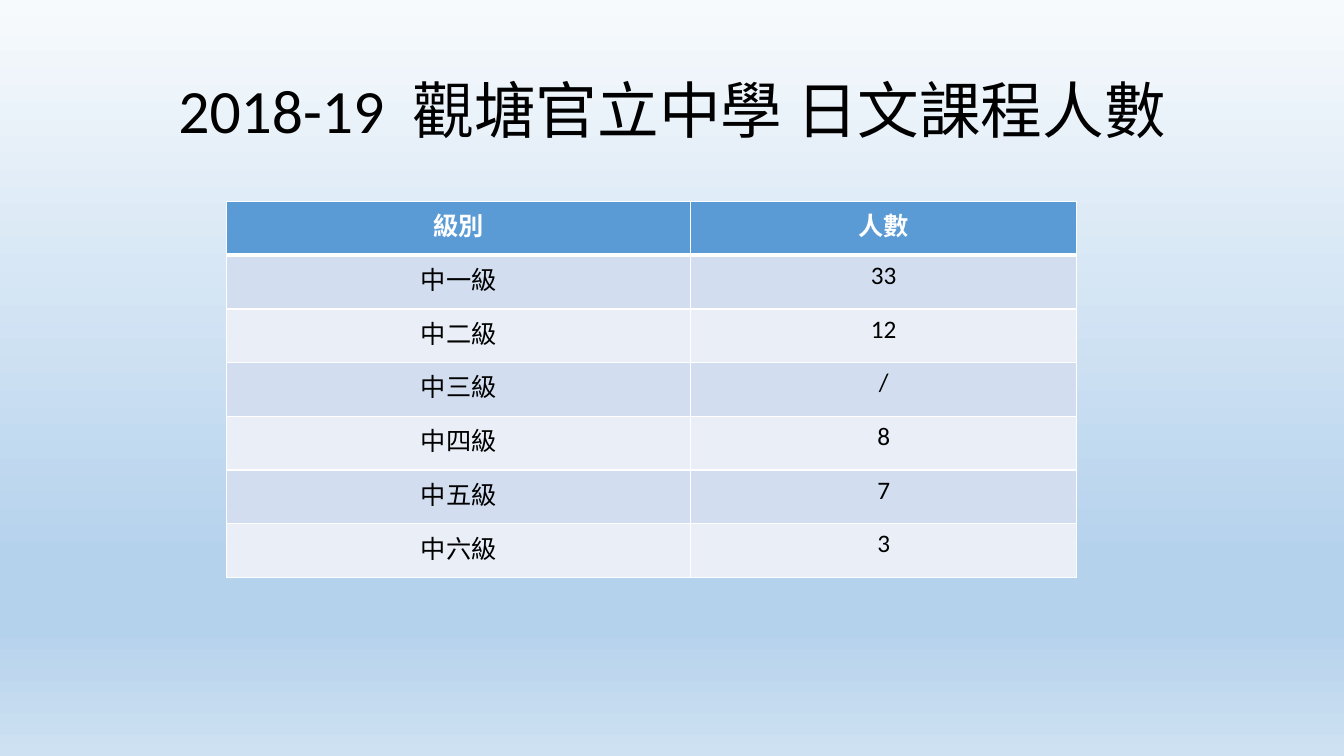
from dataclasses import dataclass

from lxml import etree
from pptx import Presentation
from pptx import util as u
from pptx.dml import color
from pptx.enum import text
from pptx.oxml import ns


@dataclass(frozen=True)
class Theme:
    font: str = "Calibri"
    title: int = 44
    body: int = 18
    gap: int = 10
    ink: str = "000000"
    white: str = "FFFFFF"
    head: str = "5B9BD5"
    bands: tuple = ("D2DEEF", "EAEFF7")
    sky: tuple = ((0, "F7FAFD"), (74, "B5D2EC"), (83, "B5D2EC"), (100, "CEE1F2"))
    thin: int = 1
    thick: int = 3


@dataclass(frozen=True)
class Row:
    level: str
    count: str


THEME = Theme()
TITLE = ("2018-19", " ", "觀塘官立中學 日文課程人數")
ROWS = [
    Row("級別", "人數"),
    Row("中一級", "33"),
    Row("中二級", "12"),
    Row("中三級", "/"),
    Row("中四級", "8"),
    Row("中五級", "7"),
    Row("中六級", "3"),
]
WIDTHS = (4.6, 3.83)


def add_run(para, words: str, size: int, tint: str, bold: bool = False):
    run = para.add_run()
    run.text = words
    style = {"name": THEME.font, "size": u.Pt(size), "bold": bold}
    for key, value in style.items():
        setattr(run.font, key, value)
    run.font.color.rgb = color.RGBColor.from_string(tint)
    return run


def add_tint(parent, tint: str) -> None:
    etree.SubElement(parent, ns.qn("a:srgbClr"), val=tint)


def paint_sky(slide) -> None:
    fill = slide.background.fill
    fill.gradient()
    fill.gradient_angle = 270
    stops = next(slide.element.iter(ns.qn("a:gsLst")))
    for stop in list(stops):
        stops.remove(stop)
    for place, tint in THEME.sky:
        add_tint(etree.SubElement(stops, ns.qn("a:gs"), pos=str(place * 1000)), tint)


def add_title(slide) -> None:
    box = slide.shapes.add_textbox(*map(u.Inches, (0.92, 0.4, 11.5, 1.45)))
    frame = box.text_frame
    frame.word_wrap = True
    frame.vertical_anchor = text.MSO_ANCHOR.MIDDLE
    para = frame.paragraphs[0]
    para.alignment = text.PP_ALIGN.CENTER
    para.line_spacing = 0.9
    year, space, name = (add_run(para, part, THEME.title, THEME.ink) for part in TITLE)
    space.font._element.set("spc", str(THEME.gap * 100))


def add_edges(cell, top: int, base: int) -> None:
    props = cell._tc.get_or_add_tcPr()
    edges = {"L": THEME.thin, "R": THEME.thin, "T": top, "B": base}
    for spot, (side, width) in enumerate(edges.items()):
        line = etree.Element(ns.qn(f"a:ln{side}"), w=str(u.Pt(width)))
        add_tint(etree.SubElement(line, ns.qn("a:solidFill")), THEME.white)
        props.insert(spot, line)


def fill_cell(cell, words: str, index: int) -> None:
    head = index == 0
    back = THEME.head if head else THEME.bands[(index - 1) % 2]
    cell.fill.solid()
    cell.fill.fore_color.rgb = color.RGBColor.from_string(back)
    para = cell.text_frame.paragraphs[0]
    para.alignment = text.PP_ALIGN.CENTER
    add_run(para, words, THEME.body, THEME.white if head else THEME.ink, head)
    top = THEME.thick if index == 1 else THEME.thin
    add_edges(cell, top, THEME.thick if head else THEME.thin)


def add_grid(slide) -> None:
    place = map(u.Inches, (2.25, 2, sum(WIDTHS), 3.73))
    table = slide.shapes.add_table(len(ROWS), len(WIDTHS), *place).table
    table.horz_banding = False
    for column, width in zip(table.columns, WIDTHS):
        column.width = u.Inches(width)
    for index, row in enumerate(ROWS):
        for cell, words in zip(table.rows[index].cells, (row.level, row.count)):
            fill_cell(cell, words, index)


def main() -> None:
    deck = Presentation()
    deck.slide_width, deck.slide_height = u.Inches(13.33), u.Inches(7.5)
    slide = deck.slides.add_slide(deck.slide_layouts[6])
    paint_sky(slide)
    add_title(slide)
    add_grid(slide)
    deck.save("out.pptx")


if __name__ == "__main__":
    main()
